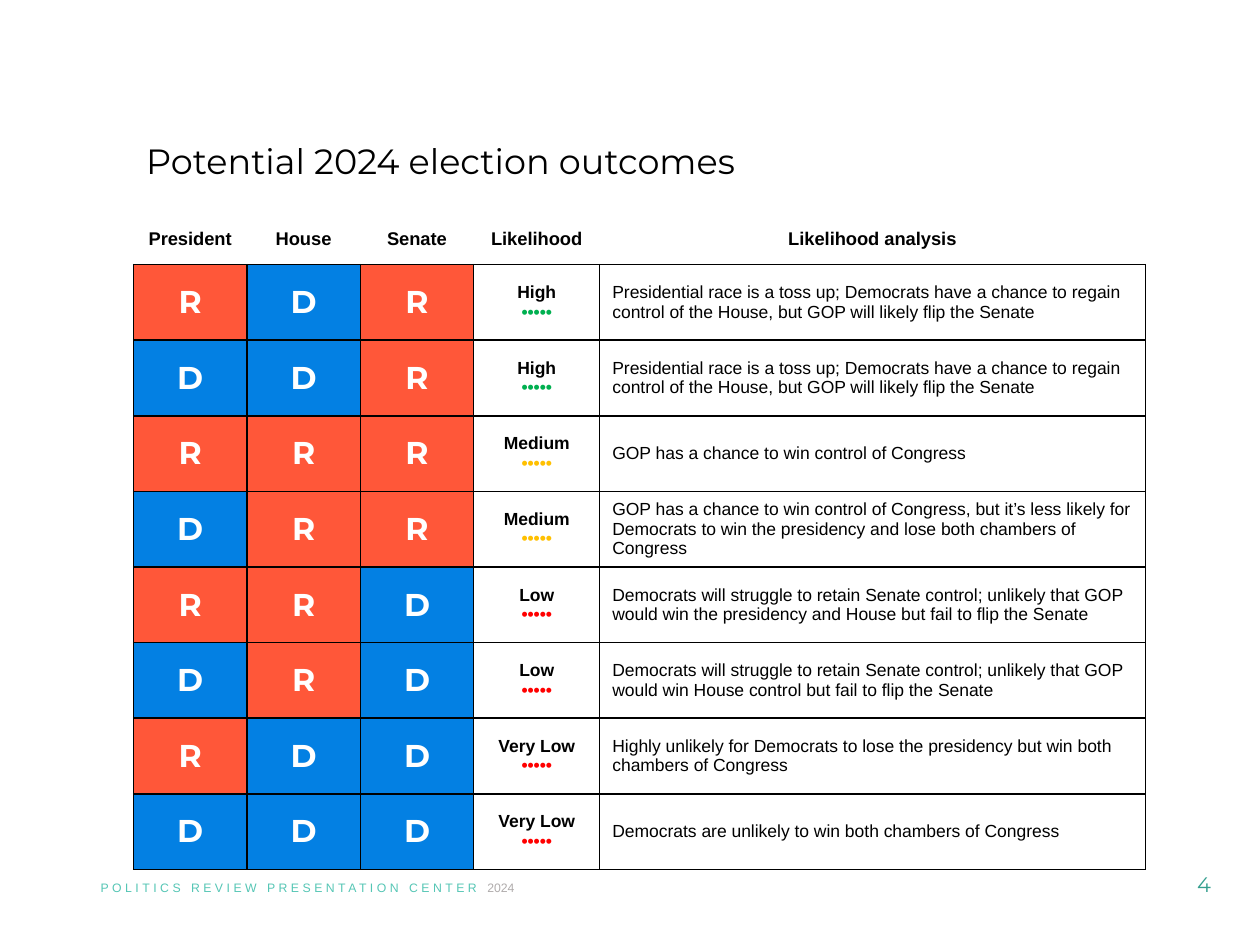
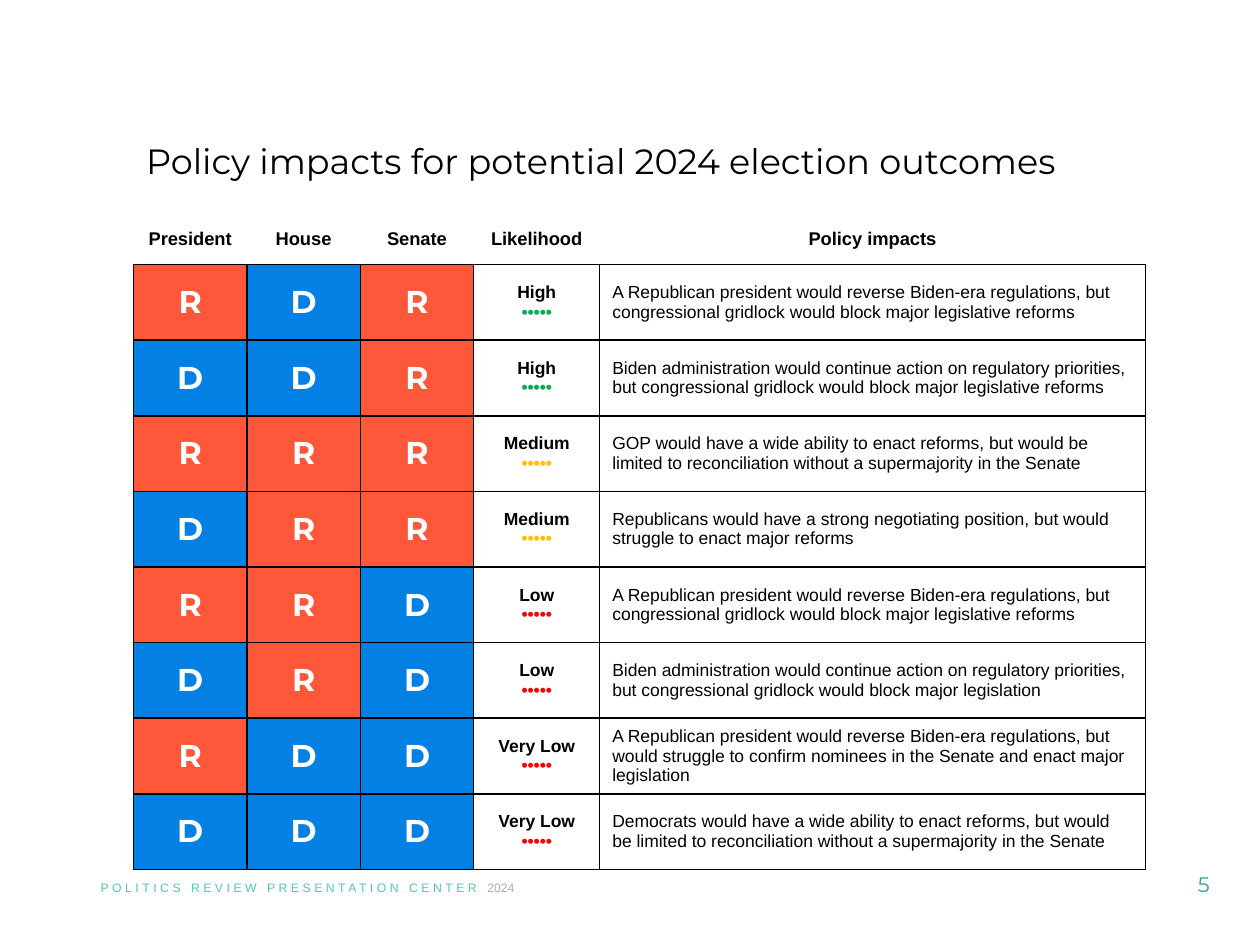
from lxml import etree
from pptx import Presentation
from pptx import util as u
from pptx.dml.color import RGBColor
from pptx.enum import text
from pptx.oxml import ns

BLACK = RGBColor(0x00, 0x00, 0x00)
WHITE = RGBColor(0xFF, 0xFF, 0xFF)
TEAL = RGBColor(0x35, 0x9F, 0x8F)
MINT = RGBColor(0x55, 0xC6, 0xB5)
GREY = RGBColor(0xAF, 0xAB, 0xAB)
GREEN = RGBColor(0x00, 0xB0, 0x50)
AMBER = RGBColor(0xFF, 0xC0, 0x00)
RED = RGBColor(0xFF, 0x00, 0x00)

PARTY_COLOURS = {"R": RGBColor(0xFF, 0x57, 0x39), "D": RGBColor(0x03, 0x80, 0xE3)}
LIKELIHOOD_COLOURS = {"High": GREEN, "Medium": AMBER, "Low": RED, "Very Low": RED}
NO_STYLE = "{2D5ABB26-0587-4C30-8999-92F81FD0307C}"

HEADERS = ["President", "House", "Senate", "Likelihood"]
COLUMN_WIDTHS = [0.9, 0.9, 0.9, 1, 4.33]
HEADER_HEIGHT, ROW_HEIGHT = 0.4, 0.6

# President, House and Senate winners, then likelihood
OUTCOMES = [
    ("RDR", "High"),
    ("DDR", "High"),
    ("RRR", "Medium"),
    ("DRR", "Medium"),
    ("RRD", "Low"),
    ("DRD", "Low"),
    ("RDD", "Very Low"),
    ("DDD", "Very Low"),
]

TOSS_UP = ("Presidential race is a toss up; Democrats have a chance to regain control "
           "of the House, but GOP will likely flip the Senate")
REVERSAL = ("A Republican president would reverse Biden-era regulations, but "
            "congressional gridlock would block major legislative reforms")

SLIDES = [
    (4, "Potential 2024 election outcomes", "Likelihood analysis", [
        TOSS_UP,
        TOSS_UP,
        "GOP has a chance to win control of Congress",
        "GOP has a chance to win control of Congress, but it’s less likely for "
        "Democrats to win the presidency and lose both chambers of Congress",
        "Democrats will struggle to retain Senate control; unlikely that GOP would "
        "win the presidency and House but fail to flip the Senate",
        "Democrats will struggle to retain Senate control; unlikely that GOP would "
        "win House control but fail to flip the Senate",
        "Highly unlikely for Democrats to lose the presidency but win both chambers "
        "of Congress",
        "Democrats are unlikely to win both chambers of Congress",
    ]),
    (5, "Policy impacts for potential 2024 election outcomes", "Policy impacts", [
        REVERSAL,
        "Biden administration would continue action on regulatory priorities, but "
        "congressional gridlock would block major legislative reforms",
        "GOP would have a wide ability to enact reforms, but would be limited to "
        "reconciliation without a supermajority in the Senate",
        "Republicans would have a strong negotiating position, but would struggle to "
        "enact major reforms",
        REVERSAL,
        "Biden administration would continue action on regulatory priorities, but "
        "congressional gridlock would block major legislation",
        "A Republican president would reverse Biden-era regulations, but would "
        "struggle to confirm nominees in the Senate and enact major legislation",
        "Democrats would have a wide ability to enact reforms, but would be limited "
        "to reconciliation without a supermajority in the Senate",
    ]),
]


def add_text(p, words, size=10, font="Arial", colour=BLACK, bold=False,
             align=text.PP_ALIGN.CENTER, spacing=0):
    """Add a formatted run to paragraph p; spacing is between letters, in points."""
    p.alignment = align
    r = p.add_run()
    r.text = words
    r.font.size = u.Pt(size)
    r.font.name = font
    r.font.color.rgb = colour
    r.font.bold = bold
    if spacing:
        r.font._element.set("spc", str(spacing * 100))


def finish_cell(cell, sides, fill=None):
    """Centre the cell vertically, rule the given sides in black and fill it."""
    cell.vertical_anchor = text.MSO_ANCHOR.MIDDLE
    tc_pr = cell._tc.get_or_add_tcPr()
    for side in sides:
        ln = etree.SubElement(tc_pr, ns.qn(f"a:ln{side}"), w=str(u.Pt(1)))
        solid = etree.SubElement(ln, ns.qn("a:solidFill"))
        etree.SubElement(solid, ns.qn("a:srgbClr"), val=str(BLACK))
    if fill is None:
        cell.fill.background()
    else:
        cell.fill.solid()
        cell.fill.fore_color.rgb = fill


prs = Presentation()
prs.slide_width, prs.slide_height = u.Inches(10), u.Inches(7.5)
title_only = prs.slide_layouts[5]

for number, title, last_header, remarks in SLIDES:
    s = prs.slides.add_slide(title_only)

    # Title
    sp = s.shapes.title
    sp.left, sp.top = u.Inches(1.06), u.Inches(0.9)
    sp.width, sp.height = u.Inches(8.03), u.Inches(0.79)
    tf = sp.text_frame
    tf.vertical_anchor = text.MSO_ANCHOR.MIDDLE
    tf.auto_size = text.MSO_AUTO_SIZE.NONE
    p = tf.paragraphs[0]
    p.line_spacing = 0.9
    add_text(p, title, size=20, font="Montserrat", align=text.PP_ALIGN.LEFT)

    # Outcome table
    table_height = HEADER_HEIGHT + ROW_HEIGHT * len(OUTCOMES)
    frame = s.shapes.add_table(len(OUTCOMES) + 1, len(COLUMN_WIDTHS), u.Inches(1.06),
                               u.Inches(1.7), u.Inches(8.03), u.Inches(table_height))
    table = frame.table
    table.horz_banding = False
    table._tbl.tblPr.find(ns.qn("a:tableStyleId")).text = NO_STYLE
    for column, width in zip(table.columns, COLUMN_WIDTHS):
        column.width = u.Inches(width)
    for i, row in enumerate(table.rows):
        row.height = u.Inches(ROW_HEIGHT if i else HEADER_HEIGHT)

    for col, header in enumerate(HEADERS + [last_header]):
        cell = table.cell(0, col)
        add_text(cell.text_frame.paragraphs[0], header, size=10.5, bold=True)
        finish_cell(cell, "B")

    for row, ((winners, likelihood), remark) in enumerate(zip(OUTCOMES, remarks), 1):
        for col, party in enumerate(winners):
            cell = table.cell(row, col)
            add_text(cell.text_frame.paragraphs[0], party, size=18, font="Montserrat",
                     colour=WHITE, bold=True)
            finish_cell(cell, "LRTB", PARTY_COLOURS[party])

        cell = table.cell(row, 3)
        tf = cell.text_frame
        add_text(tf.paragraphs[0], likelihood, bold=True)
        add_text(tf.add_paragraph(), "•••••", colour=LIKELIHOOD_COLOURS[likelihood],
                 bold=True)
        finish_cell(cell, "LRTB")

        cell = table.cell(row, 4)
        add_text(cell.text_frame.paragraphs[0], remark, align=text.PP_ALIGN.LEFT)
        finish_cell(cell, "LRTB")

    # Footer and slide number
    footer = s.shapes.add_textbox(u.Inches(0.7), u.Inches(6.94), u.Inches(5.2), u.Inches(0.22))
    footer.text_frame.word_wrap = True
    p = footer.text_frame.paragraphs[0]
    add_text(p, "POLITICS REVIEW PRESENTATION CENTER ", size=7, colour=MINT,
             align=text.PP_ALIGN.LEFT, spacing=2)
    add_text(p, "2024", size=7, colour=GREY, align=text.PP_ALIGN.LEFT)

    page = s.shapes.add_textbox(u.Inches(9.11), u.Inches(6.82), u.Inches(0.89), u.Inches(0.4))
    page.text_frame.word_wrap = True
    page.text_frame.vertical_anchor = text.MSO_ANCHOR.MIDDLE
    add_text(page.text_frame.paragraphs[0], str(number), size=12, font="Montserrat",
             colour=TEAL)

prs.save("out.pptx")
